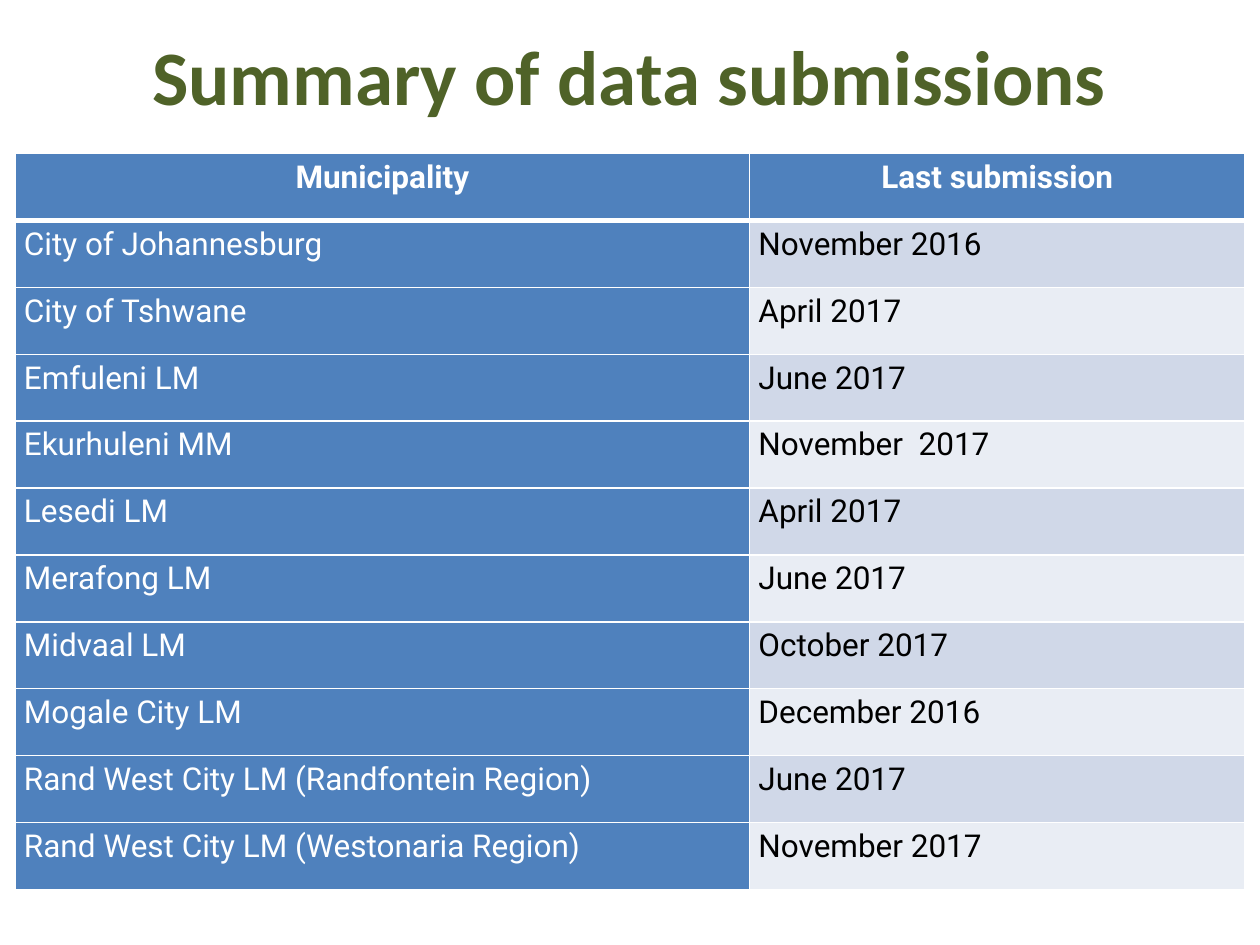
from lxml.etree import SubElement
from pptx import Presentation
from pptx.dml.color import RGBColor
from pptx.enum.text import MSO_ANCHOR, PP_ALIGN
from pptx.oxml.ns import qn
from pptx.util import Inches, Pt

WHITE = RGBColor(0xFF, 0xFF, 0xFF)
BLACK = RGBColor(0x00, 0x00, 0x00)
GREEN = RGBColor(0x4F, 0x62, 0x28)
BLUE = RGBColor(0x4F, 0x81, 0xBD)
BAND_DARK = RGBColor(0xD0, 0xD8, 0xE8)
BAND_LIGHT = RGBColor(0xE9, 0xED, 0xF4)

TITLE_FONT = {"name": "Calibri", "size": Pt(44), "bold": True}
CELL_FONT = {"name": "Roboto", "size": Pt(18)}
CELL_MARGINS = {"margin_left": Inches(0.07), "margin_right": Inches(0.07),
                "margin_top": 0, "margin_bottom": 0,
                "vertical_anchor": MSO_ANCHOR.TOP}

HEADERS = ("Municipality", "Last submission")
SUBMISSIONS = [
    ("City of Johannesburg", "November 2016"),
    ("City of Tshwane", "April 2017"),
    ("Emfuleni LM", "June 2017"),
    ("Ekurhuleni MM", "November  2017"),
    ("Lesedi LM", "April 2017"),
    ("Merafong LM", "June 2017"),
    ("Midvaal LM", "October 2017"),
    ("Mogale City LM", "December 2016"),
    ("Rand West City LM (Randfontein Region)", "June 2017"),
    ("Rand West City LM (Westonaria Region)", "November 2017"),
]


def set_attrs(obj, values):
    for name, value in values.items():
        setattr(obj, name, value)


def write_text(p, text, align, font, color):
    p.alignment = align
    r = p.add_run()
    r.text = text
    set_attrs(r.font, font)
    r.font.color.rgb = color


def add_title(slide, text):
    sp = slide.shapes.title
    set_attrs(sp, {"left": Inches(0.12), "top": Inches(-0.03),
                   "width": Inches(9.76), "height": Inches(1.25)})
    tf = sp.text_frame
    tf.vertical_anchor = MSO_ANCHOR.MIDDLE
    write_text(tf.paragraphs[0], text, PP_ALIGN.CENTER, TITLE_FONT, GREEN)


def set_borders(cell, widths):
    tcPr = cell._tc.get_or_add_tcPr()
    for side, width in widths.items():
        ln = SubElement(tcPr, qn(f"a:ln{side}"), w=str(Pt(width)))
        fill = SubElement(ln, qn("a:solidFill"))
        SubElement(fill, qn("a:srgbClr"), val=str(WHITE))


def format_cell(cell, text, row, col):
    header = row == 0
    # Borders come before the fill in the cell properties
    set_borders(cell, {"L": 1, "R": 1, "T": 3 if row == 1 else 1,
                       "B": 3 if header else 1})
    band = BAND_DARK if row % 2 else BAND_LIGHT
    blue = header or col == 0
    cell.fill.solid()
    cell.fill.fore_color.rgb = BLUE if blue else band
    set_attrs(cell, CELL_MARGINS)
    p = cell.text_frame.paragraphs[0]
    p.line_spacing = 1.15
    write_text(p, text, PP_ALIGN.CENTER if header else PP_ALIGN.LEFT,
               CELL_FONT | {"bold": header}, WHITE if blue else BLACK)


def add_submission_table(slide):
    rows = [HEADERS, *SUBMISSIONS]
    frame = slide.shapes.add_table(len(rows), len(HEADERS), Inches(0.12),
                                   Inches(1.22), Inches(9.76), Inches(5.84))
    table = frame.table
    table.columns[0].width = Inches(5.83)
    table.columns[1].width = Inches(3.93)
    for i, row in enumerate(rows):
        for j, text in enumerate(row):
            format_cell(table.cell(i, j), text, i, j)


def main():
    prs = Presentation()
    prs.slide_width, prs.slide_height = Inches(10), Inches(7.5)
    slide = prs.slides.add_slide(prs.slide_layouts[5])
    add_title(slide, "Summary of data submissions")
    add_submission_table(slide)
    prs.save("out.pptx")


if __name__ == "__main__":
    main()
